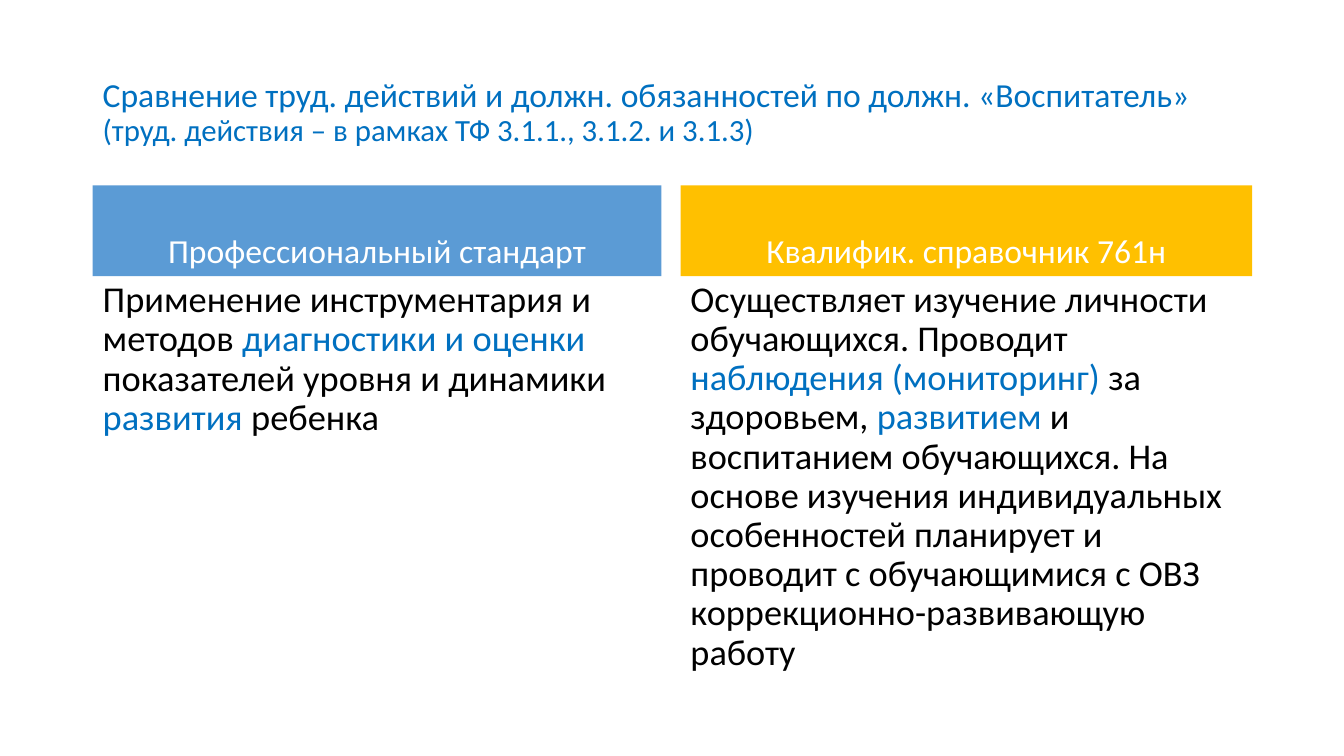
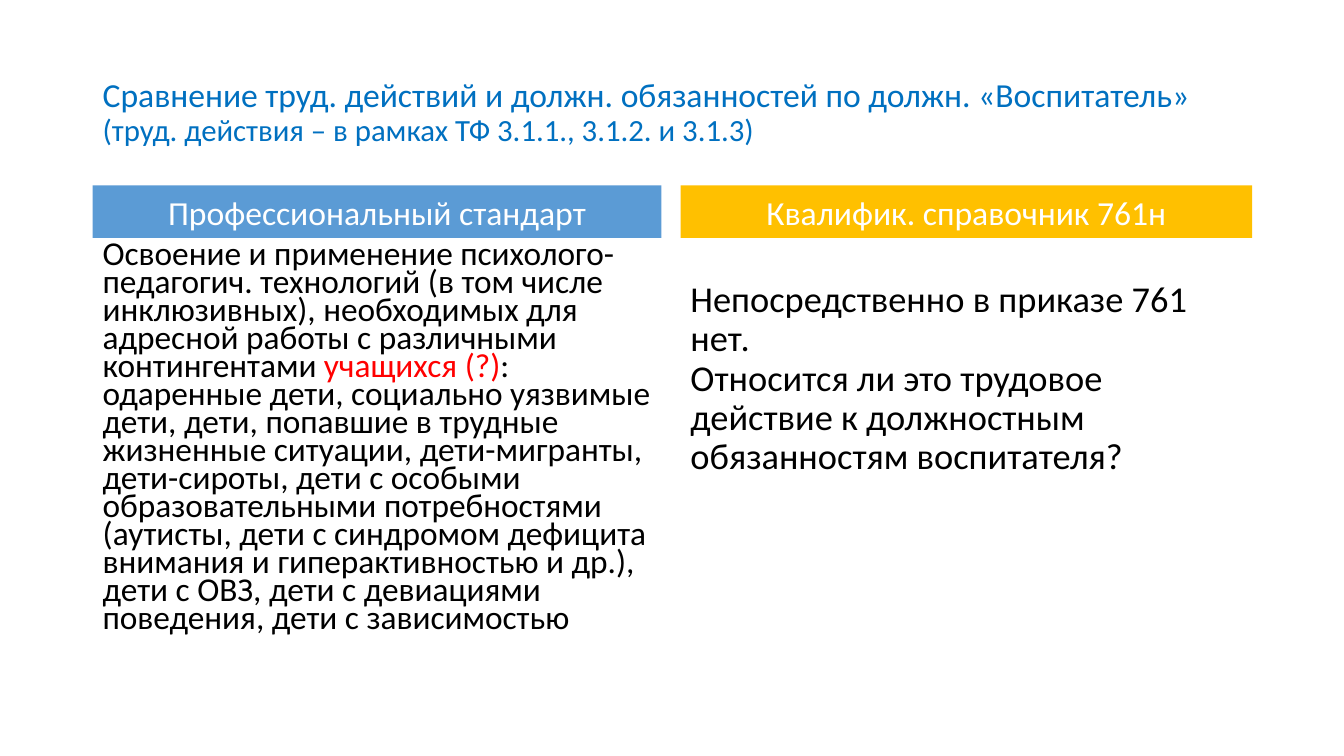
from pptx import Presentation
from pptx.dml.color import RGBColor
from pptx.enum.shapes import MSO_SHAPE
from pptx.enum.text import MSO_ANCHOR, PP_ALIGN
from pptx.util import Inches, Pt

BLUE = RGBColor(0x5B, 0x9B, 0xD5)
GOLD = RGBColor(0xFF, 0xC0, 0x00)
ACCENT = RGBColor(0x00, 0x70, 0xC0)
RED = RGBColor(0xFF, 0x00, 0x00)
BLACK = RGBColor(0x00, 0x00, 0x00)
WHITE = RGBColor(0xFF, 0xFF, 0xFF)
FONT = "Calibri"

LEFT, TITLE_WIDTH = 0.92, 11.5
HEADER_TOP = 1.84
COLUMNS = [
    (LEFT, 5.64, BLUE, "Профессиональный стандарт"),
    (6.75, 5.67, GOLD, "Квалифик. справочник 761н"),
]
TITLE = [
    "Сравнение труд. действий и должн. обязанностей по должн. «Воспитатель»",
    "(труд. действия – в рамках ТФ 3.1.1., 3.1.2. и 3.1.3)",
]


def add_span(paragraph, text, size, color):
    span = paragraph.add_run()
    span.text = text
    span.font.name = FONT
    span.font.size = Pt(size)
    span.font.color.rgb = color


def write_text(box, paragraphs, size=26, color=BLACK, spacing=0.9,
               align=PP_ALIGN.LEFT, anchor=MSO_ANCHOR.TOP):
    frame = box.text_frame
    frame.word_wrap = True
    frame.vertical_anchor = anchor
    for index, spans in enumerate(paragraphs):
        paragraph = frame.add_paragraph() if index else frame.paragraphs[0]
        paragraph.alignment = align
        paragraph.line_spacing = spacing
        for text, span_color in spans:
            add_span(paragraph, text, size, span_color or color)


class ComparisonDeck:
    def __init__(self):
        self.deck = Presentation()
        self.deck.slide_width = Inches(13.33)
        self.deck.slide_height = Inches(7.5)
        self.page = None

    def add_page(self, header_height):
        self.page = self.deck.slides.add_slide(self.deck.slide_layouts[6])
        self.add_title()
        for column in COLUMNS:
            self.add_header(column, header_height)

    def add_box(self, left, top, width, height):
        return self.page.shapes.add_textbox(
            Inches(left), Inches(top), Inches(width), Inches(height))

    def add_title(self):
        box = self.add_box(LEFT, 0.4, TITLE_WIDTH, 1.45)
        heading, detail = TITLE
        write_text(box, [[(heading, None)]], size=24, color=ACCENT,
                   anchor=MSO_ANCHOR.MIDDLE)
        paragraph = box.text_frame.paragraphs[0]
        paragraph.add_line_break()
        add_span(paragraph, detail, 22, ACCENT)

    def add_header(self, column, height):
        left, width, fill, label = column
        band = self.page.shapes.add_shape(
            MSO_SHAPE.RECTANGLE, Inches(left), Inches(HEADER_TOP),
            Inches(width), Inches(height))
        band.shadow.inherit = False
        band.fill.solid()
        band.fill.fore_color.rgb = fill
        band.line.fill.background()
        write_text(band, [[(label, None)]], size=24, color=WHITE,
                   align=PP_ALIGN.CENTER, anchor=MSO_ANCHOR.BOTTOM)

    def add_body(self, column, paragraphs, top=2.74, height=4.03, **style):
        left, width, _, _ = COLUMNS[column]
        write_text(self.add_box(left, top, width, height), paragraphs, **style)


def main():
    slides = ComparisonDeck()

    slides.add_page(header_height=0.9)
    slides.add_body(0, [[
        ("Применение инструментария и методов ", None),
        ("диагностики и оценки ", ACCENT),
        ("показателей уровня и динамики ", None),
        ("развития", ACCENT),
        (" ребенка", None),
    ]])
    slides.add_body(1, [[
        ("Осуществляет изучение личности обучающихся. Проводит ", None),
        ("наблюдения (мониторинг)", ACCENT),
        (" за здоровьем, ", None),
        ("развитием", ACCENT),
        (" и воспитанием обучающихся. На основе изучения индивидуальных "
         "особенностей планирует и проводит с обучающимися с ОВЗ "
         "коррекционно-развивающую работу", None),
    ]], size=25.9)

    slides.add_page(header_height=0.52)
    slides.add_body(0, [[
        ("Освоение и применение психолого-педагогич. технологий (в том числе "
         "инклюзивных), необходимых для адресной работы с различными "
         "контингентами ", None),
        ("учащихся (?)", RED),
        (": одаренные дети, социально уязвимые дети, дети, попавшие в трудные "
         "жизненные ситуации, дети-мигранты, дети-сироты, дети с особыми "
         "образовательными потребностями (аутисты, дети с синдромом дефицита "
         "внимания и гиперактивностью и др.), дети с ОВЗ, дети с девиациями "
         "поведения, дети с зависимостью", None),
    ]], top=2.36, height=4.44, size=23.8, spacing=0.7)
    slides.add_body(1, [
        [("Непосредственно в приказе 761 нет.", None)],
        [("Относится ли это трудовое действие к должностным обязанностям "
          "воспитателя?", None)],
    ])

    slides.deck.save("out.pptx")


if __name__ == "__main__":
    main()
